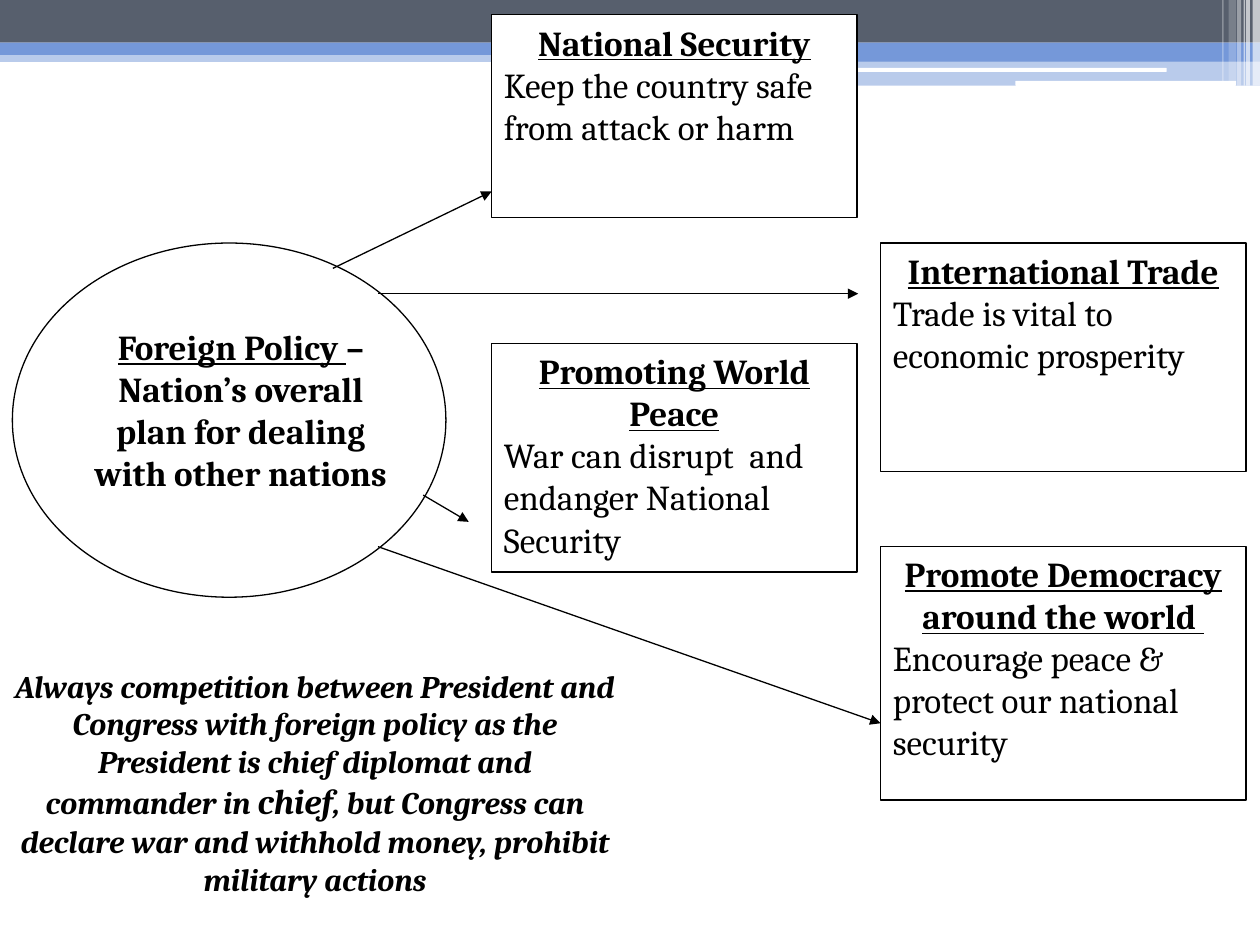
from dataclasses import dataclass
from typing import NamedTuple

from lxml import etree
from pptx import Presentation, util as u
from pptx.dml.color import RGBColor
from pptx.enum import shapes, text
from pptx.oxml.ns import qn

BLACK, WHITE, SLATE, BLUE = "000000", "FFFFFF", "575F6D", "7598D9"
FONT = "Cambria"
CENTER, LEFT = text.PP_ALIGN.CENTER, text.PP_ALIGN.LEFT
RECTANGLE = shapes.MSO_SHAPE.RECTANGLE
ROUNDED = shapes.MSO_SHAPE.ROUNDED_RECTANGLE
HEADING = {"bold": True, "underline": True}
BODY = {"bold": False, "underline": False}


class Frame(NamedTuple):
    """Left, top, width and height in centimetres."""
    left: float
    top: float
    width: float
    height: float

    def lengths(self) -> list:
        return [u.Cm(value) for value in self]


@dataclass
class Band:
    frame: Frame
    fill: str
    opacity: int = 100
    kind: shapes.MSO_SHAPE = RECTANGLE


@dataclass
class Goal:
    frame: Frame
    heading: str
    reason: str


class Arrow(NamedTuple):
    start_x: float
    start_y: float
    end_x: float
    end_y: float


WIDTH = 25.4
BANDS = [
    Band(Frame(0, 1.02, WIDTH, 0.23), BLUE, 50),
    Band(Frame(0, 0, WIDTH, 0.86), SLATE),
    Band(Frame(0, 0.86, WIDTH, 0.25), BLUE),
    Band(Frame(15.04, 0.99, 10.36, 0.25), BLUE),
    Band(Frame(15.04, 1.22, 10.36, 0.51), BLUE, 50),
    Band(Frame(15.01, 1.37, 8.51, 0.08), WHITE, kind=ROUNDED),
    Band(Frame(20.47, 1.63, 4.45, 0.1), WHITE, kind=ROUNDED),
    Band(Frame(25.25, 0, 0.15, 1.73), WHITE, 65),
    Band(Frame(25.12, 0, 0.08, 1.73), WHITE, 65),
    Band(Frame(25.07, 0, 0.03, 1.73), WHITE, 60),
    Band(Frame(24.94, 0, 0.08, 1.73), WHITE, 40),
    Band(Frame(24.77, 0, 0.15, 1.63), WHITE, 20),
    Band(Frame(24.64, 0, 0.03, 1.63), WHITE, 30),
]

MIDDLE, RIGHT, GOAL_WIDTH = 9.91, 17.75, 7.37
GOALS = [
    Goal(Frame(MIDDLE, 0.3, GOAL_WIDTH, 4.09), "National Security",
         "Keep the country safe from attack or harm"),
    Goal(Frame(RIGHT, 4.9, GOAL_WIDTH, 4.6), "International Trade",
         "Trade is vital to economic prosperity"),
    Goal(Frame(RIGHT, 11.02, GOAL_WIDTH, 5.11), "Promote Democracy around the world ",
         "Encourage peace & protect our national security"),
    Goal(Frame(MIDDLE, 6.93, GOAL_WIDTH, 4.6), "Promoting World Peace",
         "War can disrupt  and endanger National Security"),
]
ARROWS = [
    Arrow(6.71, 5.41, MIDDLE, 3.86),
    Arrow(7.62, 5.92, 17.3, 5.92),
    Arrow(8.53, 9.98, 9.45, 10.52),
    Arrow(7.62, 11.02, RIGHT, 14.58),
]


def color(value: str) -> RGBColor:
    return RGBColor.from_string(value)


def add_run(paragraph, wording: str, size: int = 20, **formats) -> None:
    run = paragraph.add_run()
    run.text = wording
    for name, value in {"name": FONT, "size": u.Pt(size), **formats}.items():
        setattr(run.font, name, value)
    run.font.color.rgb = color(BLACK)


def set_frame(shape) -> None:
    """Wrap the text and start it at the top of the shape."""
    formats = {"word_wrap": True, "auto_size": text.MSO_AUTO_SIZE.NONE,
               "vertical_anchor": text.MSO_ANCHOR.TOP}
    for name, value in formats.items():
        setattr(shape.text_frame, name, value)


def add_panel(slide, frame: Frame, kind=RECTANGLE, fill: str = WHITE, outlined: bool = True):
    shape = slide.shapes.add_shape(kind, *frame.lengths())
    shape.shadow.inherit = False
    shape.fill.solid()
    shape.fill.fore_color.rgb = color(fill)
    if outlined:
        shape.line.color.rgb = color(BLACK)
        shape.line.width = u.Pt(0.75)
    else:
        shape.line.fill.background()
    set_frame(shape)
    return shape


def add_band(slide, band: Band) -> None:
    shape = add_panel(slide, band.frame, band.kind, band.fill, outlined=False)
    if band.opacity < 100:
        fill_color = shape.fill._xPr.find(qn("a:solidFill"))[0]
        etree.SubElement(fill_color, qn("a:alpha"), val=str(band.opacity * 1000))


def add_goal(slide, goal: Goal) -> None:
    text_frame = add_panel(slide, goal.frame).text_frame
    heading, reason = text_frame.paragraphs[0], text_frame.add_paragraph()
    heading.alignment, reason.alignment = CENTER, LEFT
    add_run(heading, goal.heading, **HEADING)
    add_run(reason, goal.reason, **BODY)


def add_arrow(slide, arrow: Arrow) -> None:
    ends = [u.Cm(value) for value in arrow]
    connector = slide.shapes.add_connector(shapes.MSO_CONNECTOR.STRAIGHT, *ends)
    connector.line.color.rgb = color(BLACK)
    connector.line.width = u.Pt(0.75)
    etree.SubElement(connector.line._get_or_add_ln(), qn("a:tailEnd"), type="triangle")
    etree.SubElement(connector._element.spPr, qn("a:effectLst"))


def fill_title(title) -> None:
    title.left, title.top, title.width, title.height = Frame(0, 13.31, 12.7, 5.74).lengths()
    set_frame(title)
    paragraph = title.text_frame.paragraphs[0]
    paragraph.alignment = CENTER
    pieces = [
        ("Always competition between President and Congress with foreign policy as the "
         "President is chief diplomat and commander in ", 18),
        ("chief", 20),
        (", but Congress can declare war and withhold money, prohibit military actions", 18),
    ]
    for wording, size in pieces:
        add_run(paragraph, wording, size, bold=True, italic=True)


def add_policy(slide) -> None:
    add_panel(slide, Frame(0.25, 4.9, 8.74, 7.14), shapes.MSO_SHAPE.OVAL)
    for goal in GOALS:
        add_goal(slide, goal)
    label = add_panel(slide, Frame(1.63, 6.43, 6.45, 4.09), outlined=False)
    paragraph = label.text_frame.paragraphs[0]
    paragraph.alignment = CENTER
    add_run(paragraph, "Foreign Policy ", **HEADING)
    add_run(paragraph, "– Nation’s overall plan for dealing with other nations",
            bold=True, underline=False)
    for arrow in ARROWS:
        add_arrow(slide, arrow)


def main() -> None:
    presentation = Presentation()
    presentation.slide_width, presentation.slide_height = u.Cm(WIDTH), u.Cm(19.05)
    slide = presentation.slides.add_slide(presentation.slide_layouts.get_by_name("Title Only"))
    for band in BANDS:
        add_band(slide, band)
    fill_title(slide.shapes.title)
    add_policy(slide)
    presentation.save("out.pptx")


if __name__ == "__main__":
    main()
